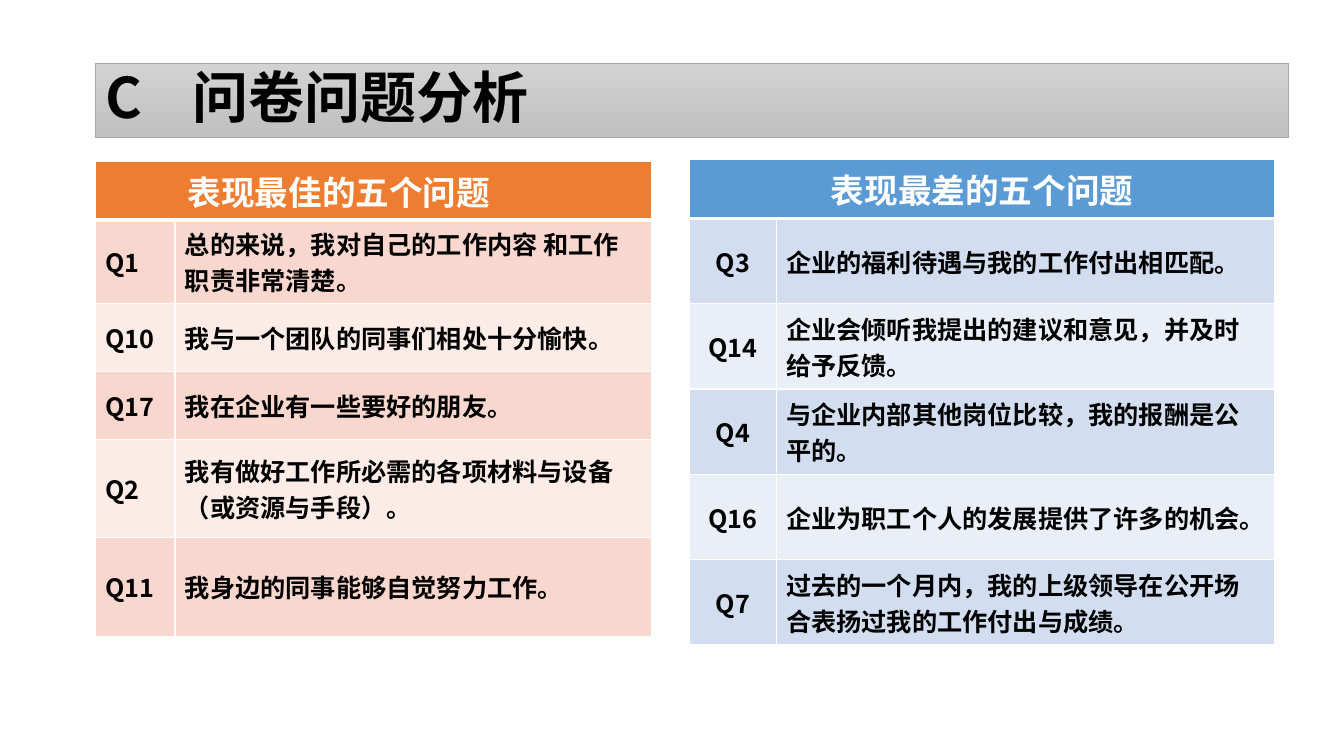
"""Build a slide with the five best and five worst survey questions."""
from dataclasses import dataclass

from lxml.etree import SubElement
from pptx import Presentation
from pptx.dml.color import RGBColor as Rgb
from pptx.enum.text import MSO_ANCHOR as Anchor, MSO_AUTO_SIZE as AutoSize, PP_ALIGN as Align
from pptx.oxml.ns import qn
from pptx.util import Cm, Pt

TITLE = "C\t问卷问题分析"
BEST = {
    "heading": "表现最佳的五个问题",
    "questions": [
        ("Q1", "总的来说，我对自己的工作内容 和工作职责非常清楚。"),
        ("Q10", "我与一个团队的同事们相处十分愉快。"),
        ("Q17", "我在企业有一些要好的朋友。"),
        ("Q2", "我有做好工作所必需的各项材料与设备（或资源与手段）。"),
        ("Q11", "我身边的同事能够自觉努力工作。"),
    ],
    "left": 2.41, "top": 1.6 * 2.54,
    "columns": [2.0, 12.02],
    "rows": [1.42, 2.05, 1.72, 1.72, 2.46, 2.5],
    "fills": ("ED7D31", "F8D7CE", "FCECE8"),
    "heading_align": Align.LEFT, "heading_anchor": Anchor.TOP, "heading_margin": 2.32,
    "label_align": Align.LEFT, "label_margin": 0.25,
}
WORST = {
    "heading": "表现最差的五个问题",
    "questions": [
        ("Q3", "企业的福利待遇与我的工作付出相匹配。"),
        ("Q14", "企业会倾听我提出的建议和意见，并及时给予反馈。"),
        ("Q4", "与企业内部其他岗位比较，我的报酬是公平的。"),
        ("Q16", "企业为职工个人的发展提供了许多的机会。"),
        ("Q7", "过去的一个月内，我的上级领导在公开场合表扬过我的工作付出与成绩。"),
    ],
    "left": 17.38, "top": 4.02,
    "columns": [2.18, 12.56],
    "rows": [1.41] + [2.15] * 5,
    "fills": ("5B9BD5", "D2DEEF", "EAEFF7"),
    "heading_align": Align.CENTER, "heading_anchor": Anchor.MIDDLE, "heading_margin": 0.25,
    "label_align": Align.CENTER, "label_margin": 0.03,
}


@dataclass(frozen=True)
class Theme:
    font: str = "Noto Sans CJK SC"
    ink: str = "000000"
    paper: str = "FFFFFF"
    banner: tuple = ("D2D2D2", "C0C0C0")
    banner_edge: str = "A5A5A5"
    title_size: int = 40
    heading_size: int = 24
    question_size: int = 18


THEME = Theme()


def write(frame, text, size, color, align):
    frame.text = text
    paragraph = frame.paragraphs[0]
    paragraph.alignment = align
    for run in paragraph.runs:
        font = run.font
        font.size, font.bold, font.name = Pt(size), True, THEME.font
        font.color.rgb = Rgb.from_string(color)
        SubElement(font._element, qn("a:ea"), typeface=THEME.font)
    return paragraph


def add_borders(cell, bottom):
    properties = cell._tc.get_or_add_tcPr()
    for position, (side, width) in enumerate(zip("LRTB", (1, 1, 1, bottom))):
        border = SubElement(properties, qn(f"a:ln{side}"), w=str(Pt(width)))
        fill = SubElement(border, qn("a:solidFill"))
        SubElement(fill, qn("a:srgbClr"), val=THEME.paper)
        properties.insert(position, border)


def fill_cell(cell, text, size, color, fill, align, anchor=Anchor.MIDDLE, margin=0.25, bottom=1):
    write(cell.text_frame, text, size, color, align)
    cell.vertical_anchor = anchor
    cell.margin_left = Cm(margin)
    cell.margin_right = Cm(min(margin, 0.25))
    cell.fill.solid()
    cell.fill.fore_color.rgb = Rgb.from_string(fill)
    add_borders(cell, bottom)


def add_title(slide):
    title = slide.shapes.title
    title.left, title.top, title.width, title.height = Cm(2.41), Cm(1.6), Cm(30.05), Cm(1.85)
    outline = SubElement(title._element.spPr, qn("a:prstGeom"), prst="snip2DiagRect")
    SubElement(outline, qn("a:avLst"))
    title.fill.gradient()
    title.fill.gradient_angle = 270
    for stop, color in zip(title.fill.gradient_stops, THEME.banner):
        stop.color.rgb = Rgb.from_string(color)
    title.line.color.rgb = Rgb.from_string(THEME.banner_edge)
    title.line.width = Pt(0.5)
    frame = title.text_frame
    frame.auto_size = AutoSize.NONE
    frame.vertical_anchor = Anchor.MIDDLE
    heading = write(frame, TITLE, THEME.title_size, THEME.ink, Align.LEFT)
    heading.line_spacing = 0.9
    tabs = SubElement(heading._p.get_or_add_pPr(), qn("a:tabLst"))
    SubElement(tabs, qn("a:tab"), pos=str(Cm(2.19)), algn="l")


def add_ranking(slide, ranking):
    columns, rows = ranking["columns"], ranking["rows"]
    table = slide.shapes.add_table(
        len(rows), len(columns), Cm(ranking["left"]), Cm(ranking["top"]),
        Cm(sum(columns)), Cm(sum(rows))).table
    for column, width in zip(table.columns, columns):
        column.width = Cm(width)
    for row, height in zip(table.rows, rows):
        row.height = Cm(height)
    heading_fill, *bands = ranking["fills"]
    table.cell(0, 0).merge(table.cell(0, 1))
    fill_cell(table.cell(0, 0), ranking["heading"], THEME.heading_size, THEME.paper, heading_fill,
              ranking["heading_align"], ranking["heading_anchor"], ranking["heading_margin"], 3)
    add_borders(table.cell(0, 1), 3)
    for index, (label, question) in enumerate(ranking["questions"]):
        band = bands[index % 2]
        fill_cell(table.cell(index + 1, 0), label, THEME.question_size, THEME.ink, band,
                  ranking["label_align"], margin=ranking["label_margin"])
        fill_cell(table.cell(index + 1, 1), question, THEME.question_size, THEME.ink, band, Align.LEFT)


def main():
    deck = Presentation()
    deck.slide_width, deck.slide_height = Cm(33.87), Cm(19.05)
    slide = deck.slides.add_slide(deck.slide_layouts[5])
    add_title(slide)
    for ranking in (BEST, WORST):
        add_ranking(slide, ranking)
    deck.save("out.pptx")


if __name__ == "__main__":
    main()
